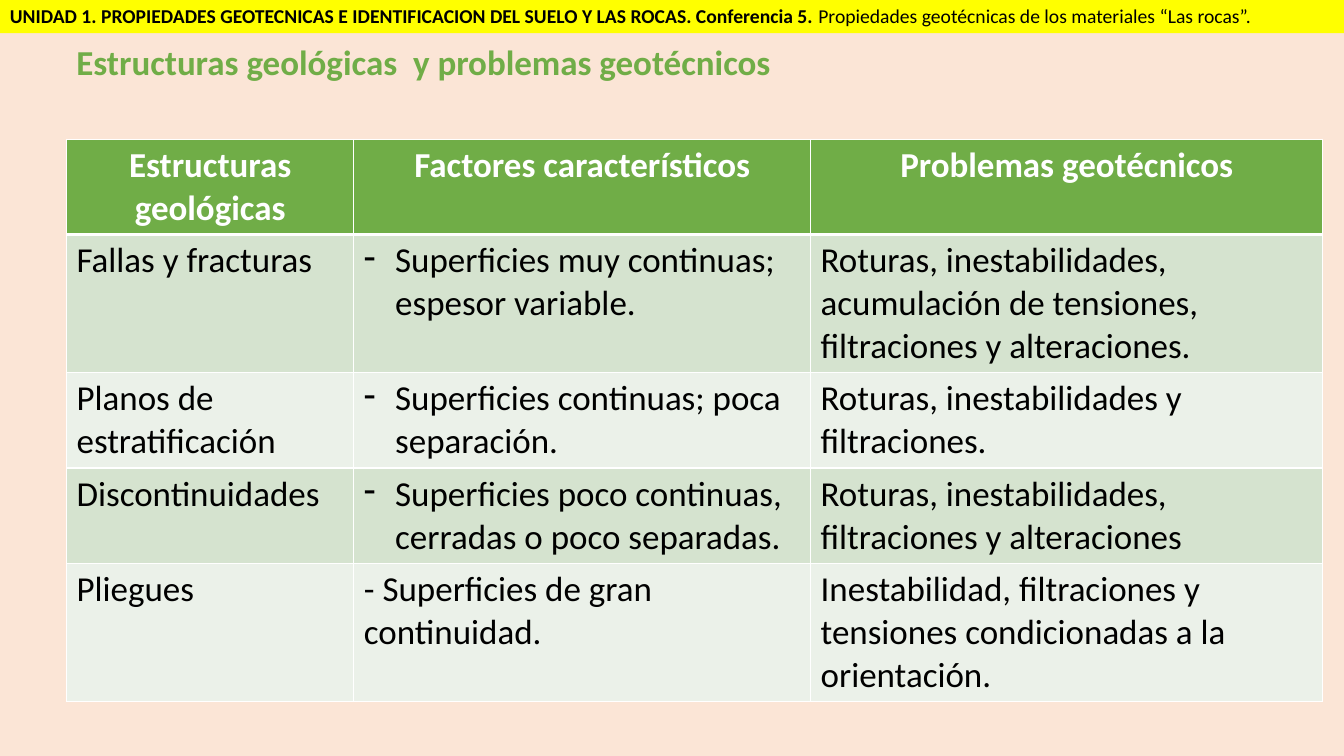
"""Build the slide on geological structures and geotechnical problems."""
import pptx
import pptx.dml.color
import pptx.enum.shapes
import pptx.enum.text
import pptx.oxml.ns
import pptx.util
from lxml import etree
from pptx.util import Inches

COLORS = {
    "background": "FBE5D6",
    "banner": "FFFF00",
    "green": "70AD47",
    "odd_row": "D5E3CF",
    "even_row": "EBF1E9",
    "white": "FFFFFF",
    "black": "000000",
}
ALIGN = pptx.enum.text.PP_ALIGN
ANCHOR = pptx.enum.text.MSO_ANCHOR
COLUMN_WIDTHS = [2.85, 4.53, 5.08]
ROW_HEIGHTS = [0.94, 1.36, 0.94, 0.94, 1.36]
HEADERS = ["Estructuras geológicas", "Factores característicos", "Problemas geotécnicos"]
STRUCTURES = [
    ["Fallas y fracturas", "Superficies muy continuas; espesor variable.",
     "Roturas, inestabilidades, acumulación de tensiones, filtraciones y alteraciones."],
    ["Planos de estratificación", "Superficies continuas; poca separación.",
     "Roturas, inestabilidades y filtraciones."],
    ["Discontinuidades", "Superficies poco continuas, cerradas o poco separadas.",
     "Roturas, inestabilidades, filtraciones y alteraciones"],
    ["Pliegues", "- Superficies de gran continuidad.",
     "Inestabilidad, filtraciones y tensiones condicionadas a la orientación."],
]


def rgb(name):
    """Return the named colour."""
    return pptx.dml.color.RGBColor.from_string(COLORS[name])


def paint(fill, name):
    """Make a fill solid in the named colour."""
    fill.solid()
    fill.fore_color.rgb = rgb(name)


def add_span(para, text, size=25, color="black", bold=False, align=ALIGN.LEFT):
    """Add formatted text to a paragraph."""
    para.alignment = align
    span = para.add_run()
    span.text = text
    span.font.name = "Calibri"
    span.font.size = pptx.util.Pt(size)
    span.font.bold = bold
    span.font.color.rgb = rgb(color)


def add_dash(para):
    """Give a paragraph a hanging dash bullet."""
    properties = para._p.get_or_add_pPr()
    properties.set("marL", str(Inches(0.31)))
    properties.set("indent", str(Inches(-0.31)))
    bullet = etree.SubElement(properties, pptx.oxml.ns.qn("a:buChar"))
    bullet.set("char", "-")


def add_borders(cell, top=1, bottom=1):
    """Draw white borders around a cell."""
    properties = cell._tc.get_or_add_tcPr()
    for side, width in {"L": 1, "R": 1, "T": top, "B": bottom}.items():
        line = etree.SubElement(properties, pptx.oxml.ns.qn(f"a:ln{side}"))
        line.set("w", str(pptx.util.Pt(width)))
        fill = etree.SubElement(line, pptx.oxml.ns.qn("a:solidFill"))
        color = etree.SubElement(fill, pptx.oxml.ns.qn("a:srgbClr"))
        color.set("val", COLORS["white"])


def add_banner(page):
    """Add the yellow strip with the unit and lecture names."""
    banner = page.shapes.add_shape(
        pptx.enum.shapes.MSO_SHAPE.RECTANGLE,
        Inches(0), Inches(-0.01), Inches(13.33), Inches(0.34))
    banner.shadow.inherit = False
    banner.line.fill.background()
    paint(banner.fill, "banner")
    frame = banner.text_frame
    frame.word_wrap = True
    frame.vertical_anchor = ANCHOR.MIDDLE
    para = frame.paragraphs[0]
    add_span(para, "UNIDAD 1. PROPIEDADES GEOTECNICAS E IDENTIFICACION DEL SUELO "
             "Y LAS ROCAS. Conferencia 5. ", size=14, bold=True)
    add_span(para, "Propiedades geotécnicas de los materiales “Las rocas”.", size=14)


def add_title(page):
    """Add the green slide heading."""
    box = page.shapes.add_textbox(Inches(0.66), Inches(0.35), Inches(10.4), Inches(0.52))
    box.text_frame.word_wrap = True
    add_span(box.text_frame.paragraphs[0], "Estructuras geológicas  y problemas geotécnicos",
             color="green", bold=True, align=ALIGN.JUSTIFY)


def add_structure_table(page):
    """Add the table of structures, factors and problems."""
    table = page.shapes.add_table(
        len(ROW_HEIGHTS), len(COLUMN_WIDTHS), Inches(0.66), Inches(1.38),
        Inches(sum(COLUMN_WIDTHS)), Inches(sum(ROW_HEIGHTS))).table
    for column, width in zip(table.columns, COLUMN_WIDTHS):
        column.width = Inches(width)
    for row, height in zip(table.rows, ROW_HEIGHTS):
        row.height = Inches(height)
    for column, text in enumerate(HEADERS):
        cell = table.cell(0, column)
        add_borders(cell, bottom=3)
        paint(cell.fill, "green")
        add_span(cell.text_frame.paragraphs[0], text, color="white", bold=True,
                 align=ALIGN.CENTER)
    for row, texts in enumerate(STRUCTURES, start=1):
        for column, text in enumerate(texts):
            cell = table.cell(row, column)
            add_borders(cell, top=3 if row == 1 else 1)
            paint(cell.fill, "odd_row" if row % 2 else "even_row")
            para = cell.text_frame.paragraphs[0]
            add_span(para, text)
            if column == 1 and not text.startswith("-"):
                add_dash(para)


def main():
    """Build and save the deck."""
    deck = pptx.Presentation()
    deck.slide_width, deck.slide_height = Inches(13.33), Inches(7.5)
    page = deck.slides.add_slide(deck.slide_layouts[6])
    paint(page.background.fill, "background")
    add_structure_table(page)
    add_title(page)
    add_banner(page)
    deck.save("out.pptx")


if __name__ == "__main__":
    main()
